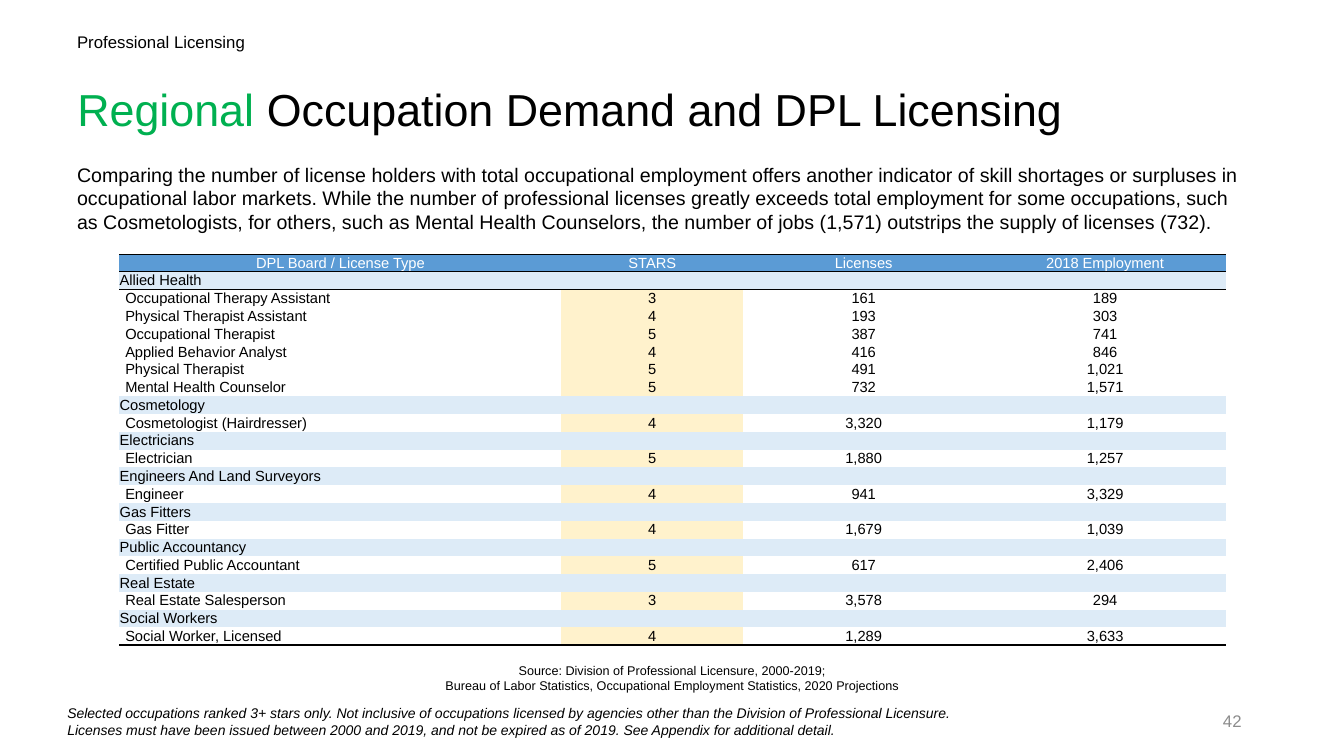
from lxml import etree
from pptx import Presentation
from pptx.dml.color import RGBColor
from pptx.enum import text as t
from pptx.oxml import ns
from pptx.util import Pt

# Content
SECTION = "Professional Licensing"
TITLE = ("Regional ", "Occupation Demand and DPL Licensing")
INTRO = (
    "Comparing the number of license holders with total occupational employment offers "
    "another indicator of skill shortages or surpluses in occupational labor markets. While "
    "the number of professional licenses greatly exceeds total employment for some "
    "occupations, such as Cosmetologists, for others, such as Mental Health Counselors, the "
    "number of jobs (1,571) outstrips the supply of licenses (732)."
)
HEADINGS = ("DPL Board / License Type", "STARS", "Licenses", "2018 Employment")
BOARDS = {
    "Allied Health": [
        ("Occupational Therapy Assistant", "3", "161", "189"),
        ("Physical Therapist Assistant", "4", "193", "303"),
        ("Occupational Therapist", "5", "387", "741"),
        ("Applied Behavior Analyst", "4", "416", "846"),
        ("Physical Therapist", "5", "491", "1,021"),
        ("Mental Health Counselor", "5", "732", "1,571"),
    ],
    "Cosmetology": [("Cosmetologist (Hairdresser)", "4", "3,320", "1,179")],
    "Electricians": [("Electrician", "5", "1,880", "1,257")],
    "Engineers And Land Surveyors": [("Engineer", "4", "941", "3,329")],
    "Gas Fitters": [("Gas Fitter", "4", "1,679", "1,039")],
    "Public Accountancy": [("Certified Public Accountant", "5", "617", "2,406")],
    "Real Estate": [("Real Estate Salesperson", "3", "3,578", "294")],
    "Social Workers": [("Social Worker, Licensed", "4", "1,289", "3,633")],
}
SOURCE = (
    "Source: Division of Professional Licensure, 2000-2019;\n"
    "Bureau of Labor Statistics, Occupational Employment Statistics, 2020 Projections"
)
FOOTNOTE = (
    "Selected occupations ranked 3+ stars only. Not inclusive of occupations licensed by "
    "agencies other than the Division of Professional Licensure.\n"
    "Licenses must have been issued between 2000 and 2019, and not be expired as of 2019. "
    "See Appendix for additional detail."
)
PAGE = "42"

THEME = {
    "font": "Arial",
    "ink": "000000", "accent": "00B050", "muted": "8C8C8C", "white": "FFFFFF",
    "header": "5B9BD5", "board": "DDEBF7", "stars": "FFF2CC",
    "title": 32, "intro": 14, "label": 12, "cell": 10.5, "footnote": 10, "source": 9,
}
NO_STYLE = "{2D5ABB26-0587-4C30-8999-92F81FD0307C}"
TABLE_LEFT, TABLE_TOP = 85, 181.5
COLUMN_WIDTHS = (316, 129.5, 172.5, 172.5)
ROW_HEIGHT = 12.18
LEFT, CENTER, RIGHT = t.PP_ALIGN.LEFT, t.PP_ALIGN.CENTER, t.PP_ALIGN.RIGHT


def style(run, size, color="ink", italic=None):
    run.font.name = THEME["font"]
    run.font.size = Pt(THEME[size])
    run.font.color.rgb = RGBColor.from_string(THEME[color])
    run.font.italic = italic


def add_text(slide, words, box, size, color="ink", align=LEFT, wrap=True, italic=None,
             anchor=t.MSO_ANCHOR.TOP):
    frame = slide.shapes.add_textbox(*map(Pt, box)).text_frame
    frame.word_wrap = wrap
    frame.vertical_anchor = anchor
    frame.text = words
    for paragraph in frame.paragraphs:
        paragraph.alignment = align
        for run in paragraph.runs:
            style(run, size, color, italic)


def add_border(cell, side, width):
    line = etree.SubElement(cell._tc.get_or_add_tcPr(), ns.qn(f"a:ln{side}"), w=str(Pt(width)))
    fill = etree.SubElement(line, ns.qn("a:solidFill"))
    etree.SubElement(fill, ns.qn("a:srgbClr"), val=THEME["ink"])


def fill_cell(cell, words, color, fill, align, indent, borders):
    for side, width in borders:
        add_border(cell, side, width)
    if fill:
        cell.fill.solid()
        cell.fill.fore_color.rgb = RGBColor.from_string(THEME[fill])
    else:
        cell.fill.background()
    cell.margin_left = Pt(indent)
    cell.margin_right = cell.margin_top = Pt(0.1)
    cell.margin_bottom = 0
    cell.vertical_anchor = t.MSO_ANCHOR.MIDDLE
    cell.text = words
    paragraph = cell.text_frame.paragraphs[0]
    paragraph.alignment = align
    for run in paragraph.runs:
        style(run, "cell", color)
    if not words:  # keeps empty cells from growing the row
        etree.SubElement(paragraph._p, ns.qn("a:endParaRPr"), sz=str(int(THEME["cell"] * 100)))


def add_license_table(slide):
    rows = [("header", HEADINGS)]
    for board, licenses in BOARDS.items():
        rows.append(("board", (board, "", "", "")))
        rows += [("license", entry) for entry in licenses]

    frame = slide.shapes.add_table(
        len(rows), len(HEADINGS), Pt(TABLE_LEFT), Pt(TABLE_TOP),
        Pt(sum(COLUMN_WIDTHS)), Pt(ROW_HEIGHT * len(rows)))
    table = frame.table
    table.first_row = table.horz_banding = False
    table._tbl.tblPr.find(ns.qn("a:tableStyleId")).text = NO_STYLE
    for column, width in zip(table.columns, COLUMN_WIDTHS):
        column.width = Pt(width)

    for r, (kind, entry) in enumerate(rows):
        table.rows[r].height = Pt(ROW_HEIGHT)
        borders = []
        if kind == "header":
            borders = [("T", 0.5), ("B", 1)]
        elif r == 1:
            borders = [("T", 1)]
        elif r == len(rows) - 1:
            borders = [("B", 1.5)]
        for c, words in enumerate(entry):
            fill = kind if kind != "license" else "stars" if c == 1 else None
            fill_cell(
                table.cell(r, c), words,
                color="white" if kind == "header" else "ink",
                fill=fill,
                align=CENTER if c or kind == "header" else LEFT,
                indent=4.5 if kind == "license" and c == 0 else 0.5,
                borders=borders)


def main():
    deck = Presentation()
    deck.slide_width, deck.slide_height = Pt(960), Pt(540)
    slide = deck.slides.add_slide(deck.slide_layouts[5])

    # Title
    title = slide.shapes.title
    title.left, title.top, title.width, title.height = map(Pt, (48, 48, 864, 63.5))
    title.text_frame.vertical_anchor = t.MSO_ANCHOR.MIDDLE
    heading = title.text_frame.paragraphs[0]
    heading.alignment, heading.line_spacing = LEFT, 0.9
    for words, color in zip(TITLE, ("accent", "ink")):
        run = heading.add_run()
        run.text = words
        style(run, "title", color)

    # Section label and introduction
    add_text(slide, SECTION, (48, 19, 135.5, 21.5), "label", wrap=False)
    add_text(slide, INTRO, (48, 112.5, 856, 58), "intro")

    # Licenses by board
    add_license_table(slide)

    # Source, footnote and page number
    add_text(slide, SOURCE, (222, 470, 516, 29), "source", align=CENTER)
    add_text(slide, FOOTNOTE, (41, 500, 823, 31.5), "footnote", italic=True)
    add_text(slide, PAGE, (678, 500.5, 216, 29), "label", "muted", RIGHT,
             anchor=t.MSO_ANCHOR.MIDDLE)

    deck.save("out.pptx")


if __name__ == "__main__":
    main()
